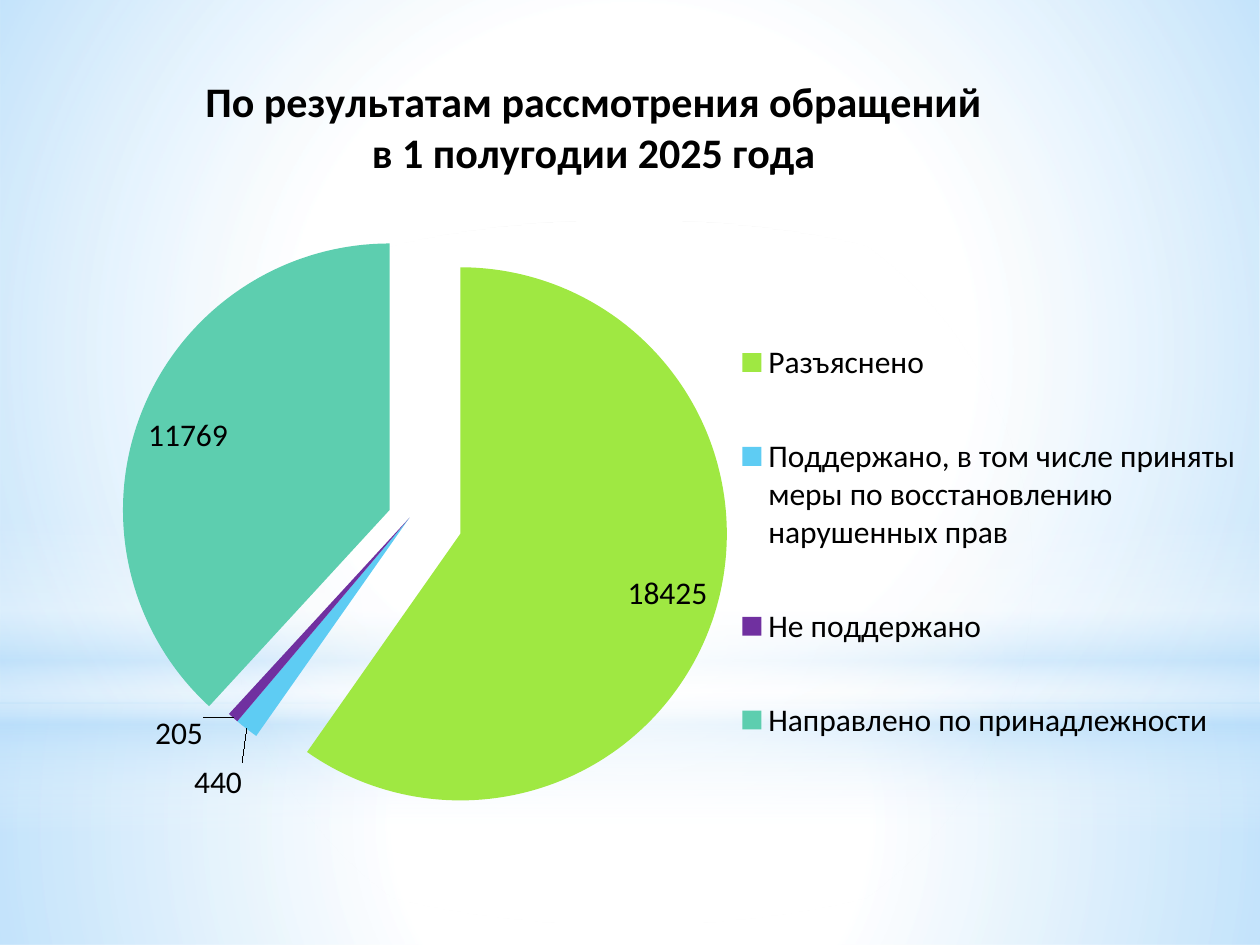
"""Builds a slide with an exploded pie of appeal outcomes on a soft blue backdrop."""
from lxml.etree import SubElement
from pptx import Presentation
from pptx.chart.data import CategoryChartData as ChartData
from pptx.dml.color import RGBColor
from pptx.enum.chart import XL_CHART_TYPE as Kind, XL_LABEL_POSITION as Pos
from pptx.enum.chart import XL_LEGEND_POSITION as Side
from pptx.enum.shapes import MSO_SHAPE as Shape
from pptx.oxml import parse_xml
from pptx.oxml.ns import qn, nsdecls
from pptx.util import Inches, Pt

BLACK = RGBColor(0, 0, 0)
LIME = RGBColor(0x9F, 0xE8, 0x42)
SKY = RGBColor(0x5E, 0xCC, 0xF3)
PLUM = RGBColor(0x70, 0x30, 0xA0)
TEAL = RGBColor(0x5D, 0xCE, 0xAF)
WHITE, PALE = "FFFFFF", "B4DCFA"
FONT = "Calibri"

TITLE = "По результатам рассмотрения обращений\nв 1 полугодии 2025 года"
SLICES = [
    ("Разъяснено", 18425, LIME, 20, Pos.INSIDE_END, None),
    ("Поддержано, в том числе приняты меры по восстановлению нарушенных прав",
     440, SKY, 0, Pos.OUTSIDE_END, (0, 0.03)),
    ("Не поддержано", 205, PLUM, 0, Pos.OUTSIDE_END, (-0.02, -0.01)),
    ("Направлено по принадлежности", 11769, TEAL, 8, Pos.INSIDE_END, None),
]
GLOWS = [
    (Shape.RECTANGLE, (0, 5.58, 10, 1.92), False,
     [(0, WHITE, 91), (37, WHITE, 76), (100, PALE, 79)]),
    (Shape.RECTANGLE, (0, 0, 10, 5.58), False,
     [(0, WHITE, 89), (48, WHITE, 62), (100, PALE, 79)]),
    (Shape.RECTANGLE, (0, 4.12, 10, 2.5), True,
     [(0, WHITE, 0), (29, WHITE, 30), (45, PALE, 40),
      (55, WHITE, 26), (65, PALE, 60), (100, WHITE, 0)]),
    (Shape.OVAL, (0, 1.75, 10, 5.58), False,
     [(0, WHITE, 100), (56, WHITE, 0)]),
]


def add_glow(slide, form, box, linear, stops):
    shape = slide.shapes.add_shape(form, *map(Inches, box))
    shape.shadow.inherit = False
    shape.line.fill.background()
    marks = "".join(
        f'<a:gs pos="{at * 1000}"><a:srgbClr val="{tint}">'
        f'<a:alpha val="{alpha * 1000}"/></a:srgbClr></a:gs>'
        for at, tint, alpha in stops)
    way = ('<a:lin ang="5400000" scaled="0"/>' if linear else
           '<a:path path="circle"><a:fillToRect l="50000" t="50000" '
           'r="50000" b="50000"/></a:path>')
    grad = parse_xml(f'<a:gradFill {nsdecls("a")} rotWithShape="1">'
                     f'<a:gsLst>{marks}</a:gsLst>{way}</a:gradFill>')
    shape.element.spPr.find(qn("a:prstGeom")).addnext(grad)


def set_layout(prior, **parts):
    for old in prior.getparent().findall(qn("c:layout")):
        prior.getparent().remove(old)
    layout = parse_xml(f'<c:layout {nsdecls("c")}><c:manualLayout/></c:layout>')
    for tag, value in parts.items():
        SubElement(layout[0], qn(f"c:{tag}")).set("val", str(value))
    prior.addnext(layout)


def set_font(font, size, bold=False):
    font.name, font.size, font.bold = FONT, Pt(size), bold
    font.color.rgb = BLACK


def add_pie(slide):
    data = ChartData()
    data.categories = [row[0] for row in SLICES]
    data.add_series("Series 1", [row[1] for row in SLICES])
    box = map(Inches, (0, 0.05, 10, 7.45))
    chart = slide.shapes.add_chart(Kind.PIE, *box, data).chart
    set_font(chart.font, 18)
    edge = {"xMode": "edge", "yMode": "edge"}

    chart.has_title = True
    title = chart.chart_title
    title.text_frame.text = TITLE
    for para in title.text_frame.paragraphs:
        for run in para.runs:
            set_font(run.font, 24, True)
    set_layout(title._element.find(qn("c:tx")), **edge, x=0.16, y=0.07)

    chart.has_legend = True
    legend = chart.legend
    legend.position, legend.include_in_layout = Side.RIGHT, False
    set_font(legend.font, 18)
    set_layout(legend._element.find(qn("c:legendPos")),
               **edge, x=0.58, y=0.3, w=0.41, h=0.54)

    plot = chart.plots[0]
    plot.vary_by_categories = True
    area = plot._element.getparent()
    for old in area.findall(qn("c:layout")):
        area.remove(old)
    area.insert(0, parse_xml(f'<c:layout {nsdecls("c")}/>'))
    for tag, value in {"layoutTarget": "inner", **edge, "x": 0.06,
                       "y": 0.19, "w": 0.53, "h": 0.71}.items():
        if not len(area[0]):
            SubElement(area[0], qn("c:manualLayout"))
        SubElement(area[0][0], qn(f"c:{tag}")).set("val", str(value))

    series = plot.series[0]
    labels = series.data_labels
    labels.show_value = True
    set_font(labels.font, 18)
    for i, (_, _, tint, burst, place, shift) in enumerate(SLICES):
        point = series.points[i]
        point.format.fill.solid()
        point.format.fill.fore_color.rgb = tint
        spot = series._element.findall(qn("c:dPt"))[i]
        push = parse_xml(f'<c:explosion {nsdecls("c")} val="{burst}"/>')
        spot.find(qn("c:spPr")).addprevious(push)
        label = point.data_label
        set_font(label.font, 18)
        label.position = place
        if shift:
            item = labels._element.findall(qn("c:dLbl"))[i]
            set_layout(item.find(qn("c:idx")), x=shift[0], y=shift[1])
    spread = parse_xml(f'<c:explosion {nsdecls("c")} val="25"/>')
    series._element.find(qn("c:dPt")).addprevious(spread)
    for old in labels._element.findall(qn("c:showLeaderLines")):
        labels._element.remove(old)
    SubElement(labels._element, qn("c:showLeaderLines")).set("val", "1")


def main():
    deck = Presentation()
    deck.slide_width, deck.slide_height = Inches(10), Inches(7.5)
    slide = deck.slides.add_slide(deck.slide_layouts[6])
    for glow in GLOWS:
        add_glow(slide, *glow)
    add_pie(slide)
    deck.save("out.pptx")


if __name__ == "__main__":
    main()
